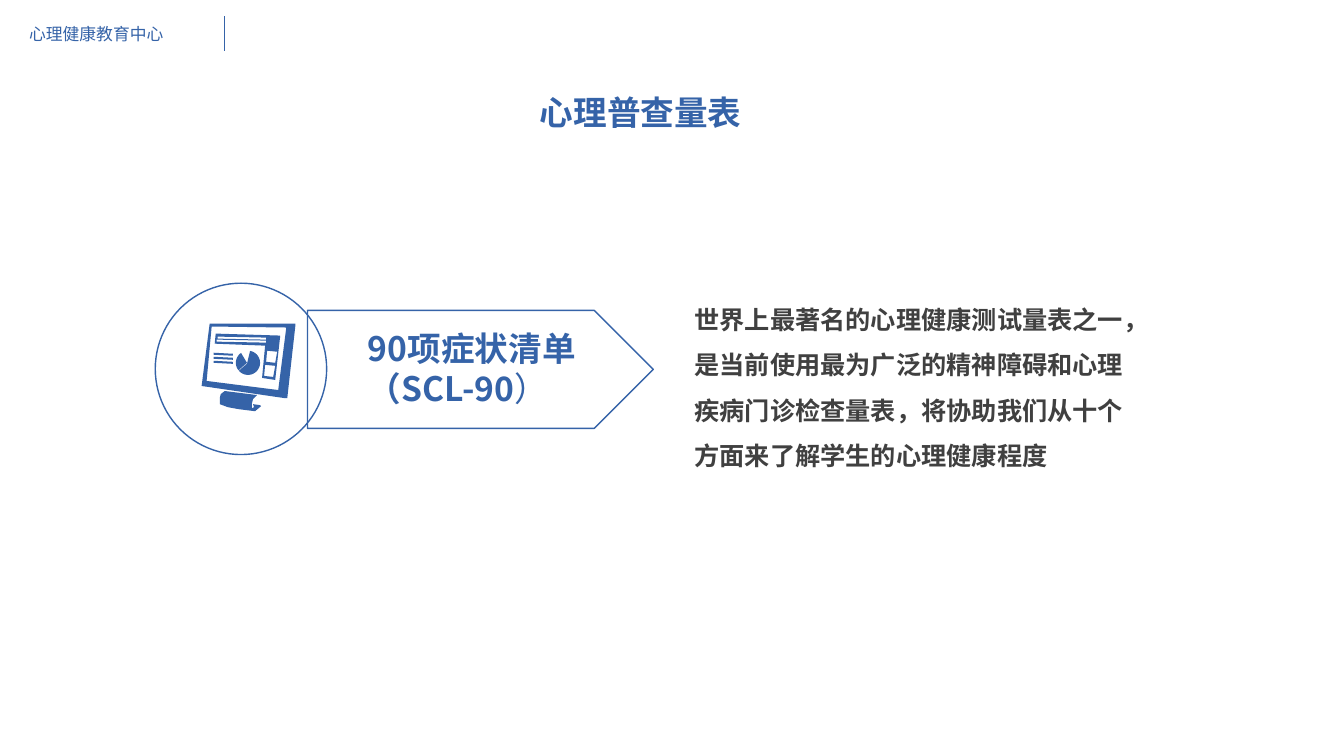
import math

from pptx import Presentation
from pptx import util as u
from pptx.dml.color import RGBColor
from pptx.enum import shapes, text
from pptx.oxml.ns import qn
from lxml import etree

BLUE = RGBColor(0x35, 0x63, 0xA8)
DARK = RGBColor(0x40, 0x40, 0x40)
WHITE = RGBColor(0xFF, 0xFF, 0xFF)
CJK = "Noto Sans CJK SC"
PX = 9144  # 100 px to the inch


def arc(cx, cy, r, start, end, steps=24):
    """Points along a circle, angles in degrees clockwise from the right."""
    angles = [math.radians(start + (end - start) * i / steps) for i in range(steps + 1)]
    return [(cx + r * math.cos(a), cy + r * math.sin(a)) for a in angles]


def monitor_outlines():
    """Nested outlines; every second level is a hole."""
    stand = [(223, 388), (219, 391), (218, 395), (218, 401), (226, 404), (237, 406),
             (253, 408), (259, 403), (258, 402), (251, 401), (252, 404), (250, 405),
             (250, 400), (251, 396), (255, 392)]
    case = [(293, 321), (208, 321), (200, 383), (282, 395), (285, 395), (293, 323)]
    glass = [(210, 324), (284, 325), (276, 387), (205, 378)]
    banner = [(214, 331), (213, 341), (263, 343), (260, 375), (273, 377), (278, 333)]
    menu_bars = [[(x, y), (264, y + 1), (264, y + 3), (x, y + 2)]
                 for x, y in ((216, 334), (215, 337))]
    windows = [[(x, y), (x + 10, y + 1), (x + 8, y + 12), (x - 1, y + 11)]
               for x, y in ((265, 348), (263, 362))]
    text_lines = [[(212, y), (231, y + 1), (231, y + 3), (212, y + 2)]
                  for y in (350, 354, 358)]
    pie = [[(245, 360)] + arc(246, 360, 12, 142, 235),
           [(245, 361)] + arc(246, 360, 12, 139, -80)]
    return [stand, case, glass, banner, *menu_bars, *windows, *text_lines, *pie]


class SlideBuilder:
    def __init__(self, slide):
        self.slide = slide
        self.shapes = slide.shapes

    def box(self, *lengths):
        return [n * PX for n in lengths]

    def font(self, font, size, color, name=CJK, bold=True):
        font.size, font.bold, font.name = u.Pt(size), bold, name
        font.color.rgb = color
        etree.SubElement(font._element, qn("a:ea")).set("typeface", name)

    def outline(self, sp, fill=None):
        sp.shadow.inherit = False
        if fill is None:
            sp.fill.background()
        else:
            sp.fill.solid()
            sp.fill.fore_color.rgb = fill
        sp.line.color.rgb = BLUE
        sp.line.width = u.Pt(1)

    def title(self, words, left, top, width, height):
        sp = self.shapes.title
        sp.left, sp.top, sp.width, sp.height = self.box(left, top, width, height)
        tf = sp.text_frame
        tf.text = words
        tf.vertical_anchor = text.MSO_ANCHOR.TOP
        tf.auto_size = text.MSO_AUTO_SIZE.SHAPE_TO_FIT_TEXT
        p = tf.paragraphs[0]
        p.alignment = text.PP_ALIGN.CENTER
        self.font(p.font, 24, BLUE)

    def text(self, words, left, top, width, height, size, color,
             name=CJK, bold=True, wrap=True, spacing=None):
        tf = self.shapes.add_textbox(*self.box(left, top, width, height)).text_frame
        tf.word_wrap = wrap
        tf.auto_size = text.MSO_AUTO_SIZE.SHAPE_TO_FIT_TEXT
        p = tf.paragraphs[0]
        p.text = words
        p.line_spacing = spacing
        self.font(p.font, size, color, name, bold)

    def circle(self, left, top, size):
        sp = self.shapes.add_shape(shapes.MSO_SHAPE.OVAL, *self.box(left, top, size, size))
        self.outline(sp, WHITE)

    def arrow(self, words, closing, left, top, width, height):
        sp = self.shapes.add_shape(shapes.MSO_SHAPE.PENTAGON,
                                   *self.box(left, top, width, height))
        self.outline(sp)
        tf = sp.text_frame
        tf.word_wrap = True
        tf.vertical_anchor = text.MSO_ANCHOR.MIDDLE
        tf.margin_left, tf.margin_top, tf.margin_right, tf.margin_bottom = \
            self.box(60, 5, 10, 8)
        p = tf.paragraphs[0]
        p.alignment = text.PP_ALIGN.LEFT
        for part, name, bold in ((words, CJK, True), (closing, "DejaVu Sans Mono", False)):
            r = p.add_run()
            r.text = part
            self.font(r.font, 24, BLUE, name, bold)

    def icon(self, outlines):
        paths = [[self.box(*point) for point in path] for path in outlines]
        builder = self.shapes.build_freeform(*paths[0][0])
        for i, path in enumerate(paths):
            if i:
                builder.move_to(*path[0])
            builder.add_line_segments(path[1:], close=True)
        sp = builder.convert_to_shape()
        sp.shadow.inherit = False
        sp.fill.solid()
        sp.fill.fore_color.rgb = BLUE
        sp.line.fill.background()

    def line(self, x1, y1, x2, y2):
        sp = self.shapes.add_connector(shapes.MSO_CONNECTOR.STRAIGHT,
                                       *self.box(x1, y1, x2, y2))
        sp.line.color.rgb = BLUE
        sp.line.width = u.Pt(0.5)
        etree.SubElement(sp._element.spPr, qn("a:effectLst"))


def main():
    prs = Presentation()
    prs.slide_width, prs.slide_height = u.Inches(13.33), u.Inches(7.5)
    s = SlideBuilder(prs.slides.add_slide(prs.slide_layouts[5]))

    s.title("心理普查量表", 371, 86, 529, 50)
    s.circle(154, 281, 170)
    s.arrow("90项症状清单（SCL-90", "）", 305, 308, 343, 117)
    s.icon(monitor_outlines())
    s.text("世界上最著名的心理健康测试量表之一，是当前使用最为广泛的精神障碍和心理疾病门诊检查量表，"
           "将协助我们从十个方面来了解学生的心理健康程度",
           679, 282, 451, 186, 18, DARK, spacing=1.5)
    s.line(223, 16, 223, 51)
    s.text("心理健康教育中心", 19, 19, 155, 30, 12, BLUE, name="Arial", bold=False, wrap=False)

    prs.save("out.pptx")


if __name__ == "__main__":
    main()
